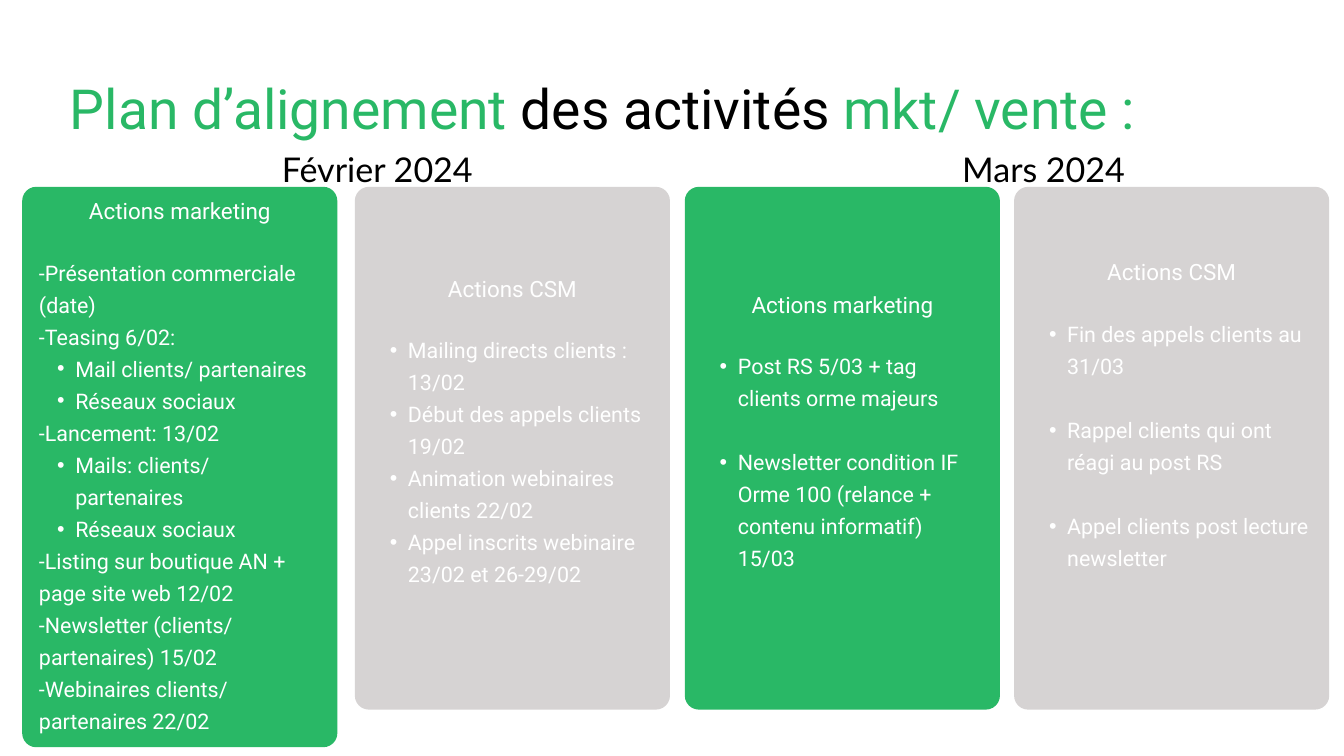
from dataclasses import dataclass

from lxml.etree import SubElement
from pptx import Presentation
from pptx.dml.color import RGBColor
from pptx.enum.shapes import MSO_SHAPE as Preset
from pptx.enum.text import MSO_ANCHOR as Anchor, MSO_AUTO_SIZE as AutoSize, PP_ALIGN as Align
from pptx.oxml.ns import qn
from pptx.slide import Slide
from pptx.util import Inches, Pt

GREEN = RGBColor(0x29, 0xB8, 0x66)
GREY = RGBColor(0xD6, 0xD3, 0xD3)
WHITE = RGBColor(0xFF, 0xFF, 0xFF)
BLACK = RGBColor(0, 0, 0)

CARD_TOP, CARD_WIDTH, CORNER = 2.78, 4.69, 0.21
HEADING_LEADING, ITEM_LEADING = 31.2, 34.3

TITLE = [("Plan d’alignement ", GREEN), ("des activités", BLACK), (" mkt/ vente :", GREEN)]
MONTHS = [("Février 2024", 4.08, 3.07), ("Mars 2024", 14.25, 2.56)]
CARDS = [
    dict(left=0.33, height=8.34, color=GREEN, heading="Actions marketing", items=[
        "-Présentation commerciale (date)",
        "-Teasing 6/02:",
        "•Mail clients/ partenaires",
        "•Réseaux sociaux",
        "-Lancement: 13/02",
        "•Mails: clients/ partenaires",
        "•Réseaux sociaux",
        "-Listing sur boutique AN + page site web 12/02",
        "-Newsletter (clients/ partenaires) 15/02",
        "-Webinaires clients/ partenaires 22/02",
    ]),
    dict(left=5.28, height=7.78, color=GREY, heading="Actions CSM", lines_below=1, items=[
        "•Mailing directs clients : 13/02",
        "•Début des appels clients 19/02",
        "•Animation webinaires clients 22/02",
        "•Appel inscrits webinaire 23/02 et 26-29/02",
    ]),
    dict(left=10.19, height=7.78, color=GREEN, heading="Actions marketing", gap=ITEM_LEADING,
         lines_below=1, items=[
             "•Post RS 5/03 + tag clients orme majeurs",
             "•Newsletter condition IF Orme 100 (relance + contenu informatif) 15/03",
         ]),
    dict(left=15.09, height=7.78, color=GREY, heading="Actions CSM", gap=ITEM_LEADING,
         lines_below=2, items=[
             "•Fin des appels clients au 31/03",
             "•Rappel clients qui ont réagi au post RS",
             "•Appel clients post lecture newsletter",
         ]),
]


def apply(target, values):
    for name, value in values.items():
        setattr(target, name, value)


@dataclass
class PlanSlide:
    """Draws the activity plan on one slide in a shared style."""

    slide: Slide
    body_font: str = "Roboto"
    month_font: str = "Lato"

    def frame(self, shape, anchor=Anchor.TOP, sides=0, top=0, bottom=0):
        frame = shape.text_frame
        apply(frame, dict(word_wrap=True, auto_size=AutoSize.NONE, vertical_anchor=anchor,
                          margin_left=Inches(sides), margin_right=Inches(sides),
                          margin_top=Inches(top), margin_bottom=Inches(bottom)))
        return frame

    def fill_text(self, paragraph, runs, size, leading, font, align=Align.LEFT, before=0, after=0):
        apply(paragraph, dict(alignment=align, line_spacing=Pt(leading),
                              space_before=Pt(before), space_after=Pt(after)))
        for text, color in runs:
            run = paragraph.add_run()
            run.text = text
            apply(run.font, dict(name=font, size=Pt(size)))
            run.font.color.rgb = color

    def title(self, runs):
        heading = self.slide.shapes.title
        apply(heading, dict(left=Inches(1.04), top=Inches(0.82),
                            width=Inches(18.96), height=Inches(1.19)))
        self.fill_text(self.frame(heading).paragraphs[0], runs, 59.2, 91.2, self.body_font)

    def month(self, label, left, width):
        box = self.slide.shapes.add_textbox(Inches(left), Inches(2.1), Inches(width), Inches(0.68))
        self.fill_text(self.frame(box).paragraphs[0], [(label, BLACK)], 36.5, 51.2,
                       self.month_font, Align.CENTER)

    def bullet(self, paragraph):
        properties = paragraph._p.get_or_add_pPr()
        for name, value in dict(marL=Inches(0.54), indent=Inches(-0.27), lvl=1).items():
            properties.set(name, str(value))
        SubElement(properties, qn("a:buFont")).set("typeface", "Arial")
        SubElement(properties, qn("a:buChar")).set("char", "•")

    def card(self, left, height, color, heading, items, gap=0, lines_below=0):
        card = self.slide.shapes.add_shape(Preset.ROUNDED_RECTANGLE, Inches(left), Inches(CARD_TOP),
                                           Inches(CARD_WIDTH), Inches(height))
        card.adjustments[0] = CORNER / CARD_WIDTH
        card.shadow.inherit = False
        card.fill.solid()
        card.fill.fore_color.rgb = color
        card.line.fill.background()
        inset = 0.25 - CORNER * (1 - 0.5 ** 0.5)
        frame = self.frame(card, Anchor.MIDDLE, inset, inset - 0.08,
                           inset + lines_below * ITEM_LEADING / 72)
        self.fill_text(frame.paragraphs[0], [(heading, WHITE)], 24, HEADING_LEADING,
                       self.body_font, Align.CENTER, after=HEADING_LEADING)
        for index, item in enumerate(items):
            paragraph = frame.add_paragraph()
            self.fill_text(paragraph, [(item.removeprefix("•"), WHITE)], 23, ITEM_LEADING,
                           self.body_font, before=gap if index else 0)
            if item.startswith("•"):
                self.bullet(paragraph)


def main():
    deck = Presentation()
    apply(deck, dict(slide_width=Inches(20), slide_height=Inches(11.25)))
    plan = PlanSlide(deck.slides.add_slide(deck.slide_layouts.get_by_name("Title Only")))
    plan.title(TITLE)
    for card in CARDS:
        plan.card(**card)
    for month in MONTHS:
        plan.month(*month)
    deck.save("out.pptx")


if __name__ == "__main__":
    main()
